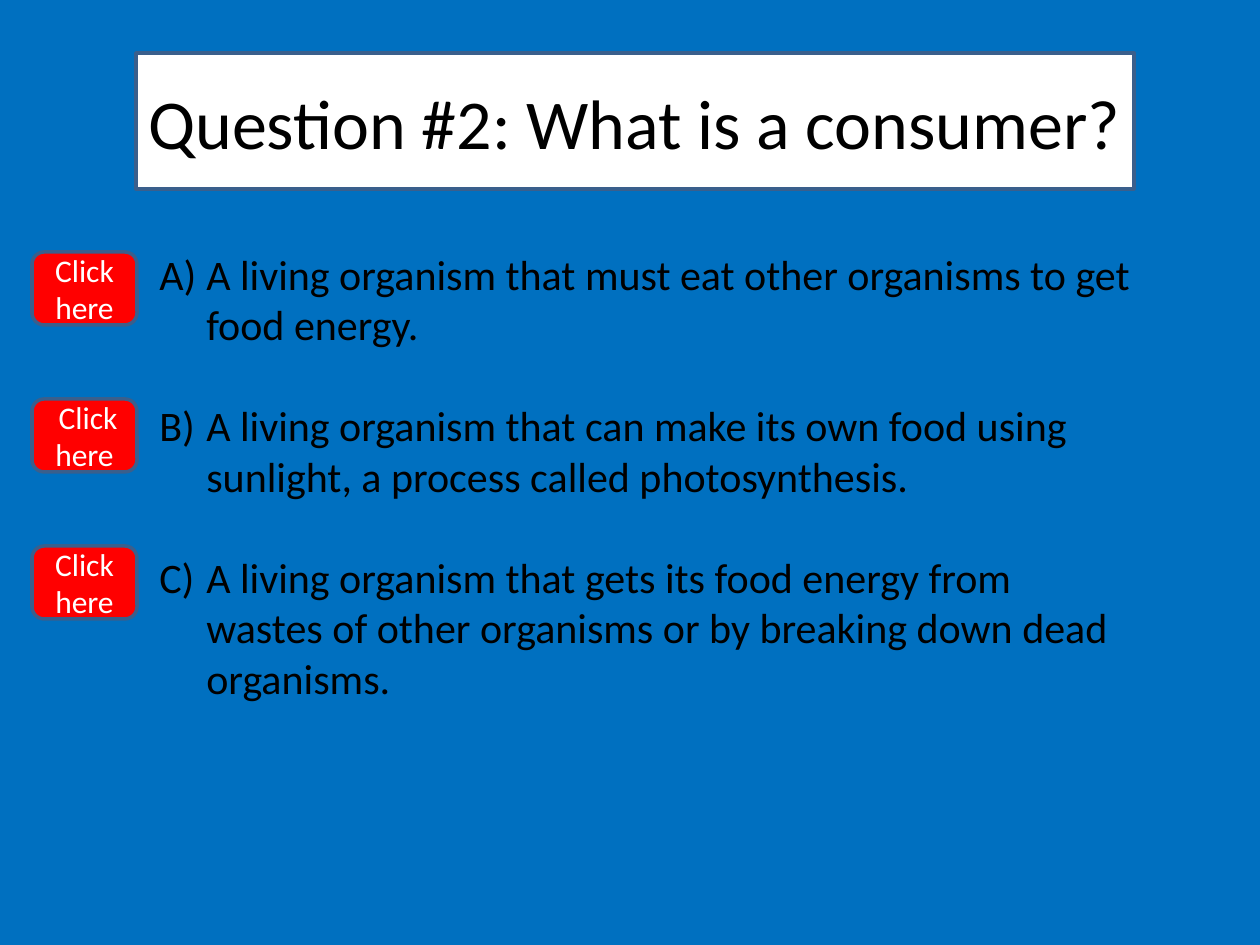
from dataclasses import dataclass

from lxml.etree import SubElement
from pptx import Presentation
from pptx.dml.color import RGBColor
from pptx.enum.shapes import MSO_SHAPE
from pptx.enum.text import MSO_ANCHOR, PP_ALIGN
from pptx.oxml.ns import qn
from pptx.util import Emu, Pt

TITLE = "Question #2: What is a consumer?"
# (button label, automatic letter number or None, answer)
ANSWERS = [
    ("Click here", 1, "A living organism that must eat other organisms to get food energy."),
    (" Click here", 2, "A living organism that can make its own food using "
     "sunlight, a process called photosynthesis."),
    ("Click here", None, "C)\tA living organism that gets its food energy from "
     "wastes of other organisms or by breaking down dead organisms."),
]

TITLE_PANEL = (136, 53, 998, 136)
TITLE_BOX = (136, 73, 1008, 97)
ANSWER_BOX = (147, 242, 998, 522)
BUTTON = (32, 252, 105, 73)
BUTTON_STEP = 147
INDENT = 47


@dataclass(frozen=True)
class Theme:
    font: str = "Calibri"
    background: str = "0070C0"
    panel: str = "FFFFFF"
    button: str = "FF0000"
    outline: str = "3A5F8C"
    text: str = "000000"
    button_text: str = "FFFFFF"
    title_size: int = 40
    answer_size: int = 24
    button_size: int = 18
    answer_gap: int = 29
    line_width: int = 2


THEME = Theme()


def px(n):
    return Emu(round(n * 914400 / 126))


def color(value):
    return RGBColor.from_string(value)


def add_run(p, text, size, fill):
    r = p.add_run()
    r.text = text
    r.font.name = THEME.font
    r.font.size = Pt(size)
    r.font.color.rgb = color(fill)


def add_panel(slide, kind, box, fill):
    sp = slide.shapes.add_shape(kind, *map(px, box))
    sp.shadow.inherit = False
    sp.fill.solid()
    sp.fill.fore_color.rgb = color(fill)
    sp.line.color.rgb = color(THEME.outline)
    sp.line.width = Pt(THEME.line_width)
    return sp


def add_text_box(slide, box):
    tf = slide.shapes.add_textbox(*map(px, box)).text_frame
    tf.word_wrap = True
    return tf


def set_hanging_letter(p, number):
    """Indent the paragraph and, if a number is given, letter it A), B) and so on."""
    pPr = p._p.get_or_add_pPr()
    pPr.set("marL", str(px(INDENT)))
    pPr.set("indent", str(-px(INDENT)))
    if number:
        SubElement(pPr, qn("a:buFont"), typeface=THEME.font)
        SubElement(pPr, qn("a:buAutoNum"), type="alphaUcParenR", startAt=str(number))


def add_button(slide, row, label):
    left, top, width, height = BUTTON
    box = (left, top + row * BUTTON_STEP, width, height)
    tf = add_panel(slide, MSO_SHAPE.ROUNDED_RECTANGLE, box, THEME.button).text_frame
    tf.word_wrap = True
    tf.vertical_anchor = MSO_ANCHOR.MIDDLE
    p = tf.paragraphs[0]
    p.alignment = PP_ALIGN.CENTER
    add_run(p, label, THEME.button_size, THEME.button_text)


def main():
    prs = Presentation()
    prs.slide_width, prs.slide_height = px(1260), px(945)
    slide = prs.slides.add_slide(prs.slide_layouts[6])
    slide.background.fill.solid()
    slide.background.fill.fore_color.rgb = color(THEME.background)

    add_panel(slide, MSO_SHAPE.RECTANGLE, TITLE_PANEL, THEME.panel)
    title = add_text_box(slide, TITLE_BOX)
    add_run(title.paragraphs[0], TITLE, THEME.title_size, THEME.text)

    answers = add_text_box(slide, ANSWER_BOX)
    for row, (label, number, answer) in enumerate(ANSWERS):
        p = answers.add_paragraph() if row else answers.paragraphs[0]
        if row:
            p.space_before = Pt(THEME.answer_gap)
        set_hanging_letter(p, number)
        add_run(p, answer, THEME.answer_size, THEME.text)
        add_button(slide, row, label)

    prs.save("out.pptx")


if __name__ == "__main__":
    main()
